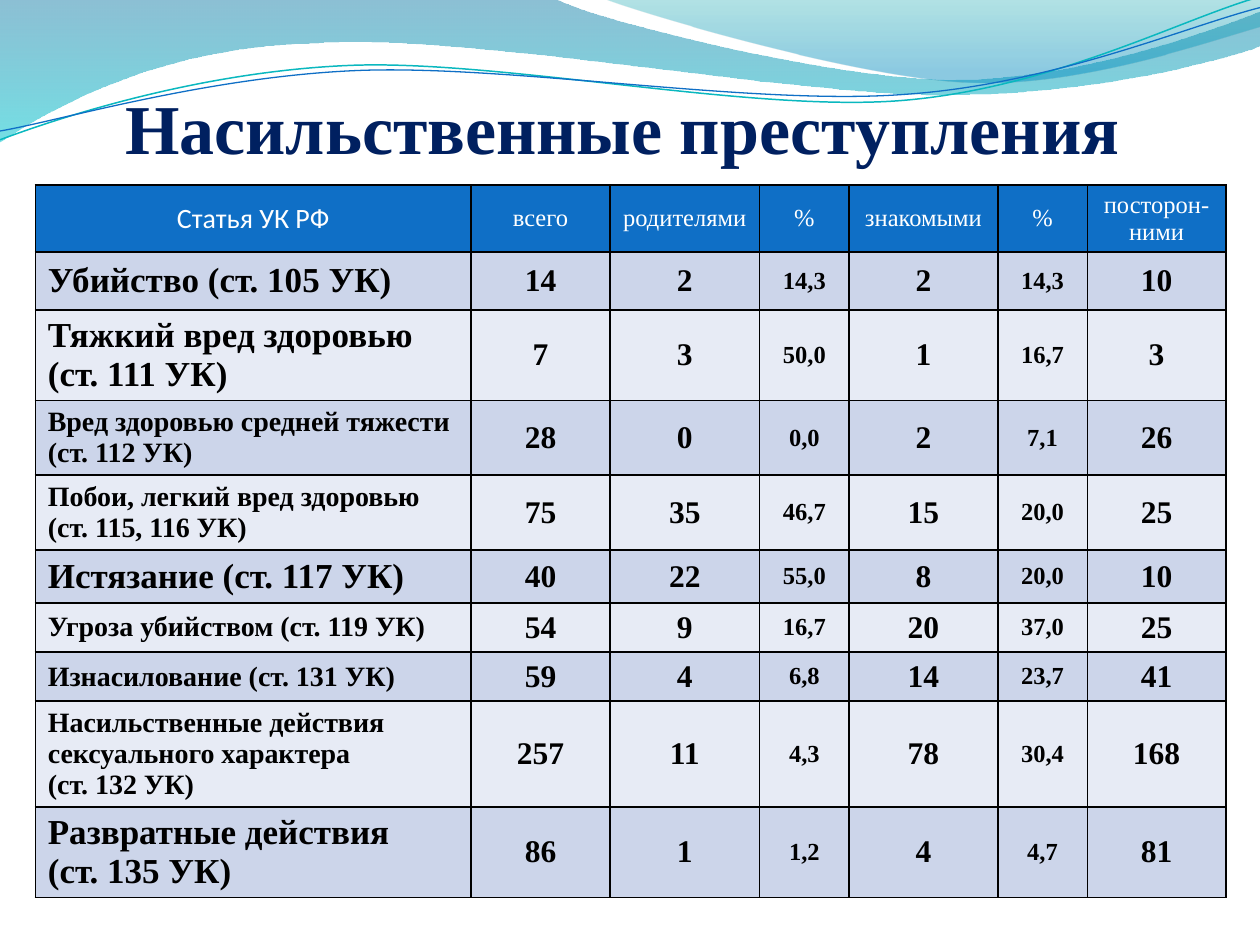
"""Build a slide with a table of violent crimes under a wave header."""
import math

from lxml import etree
from pptx import Presentation
from pptx import util as u
from pptx.dml.color import RGBColor
from pptx.enum import text
from pptx.oxml.ns import qn

SERIF, SANS = "Times New Roman", "Calibri"
NAVY, BLUE, TEAL = "002060", "0F6FC6", "0AB8BF"
BLACK, WHITE = "000000", "FFFFFF"
BANDS = ("CCD5EA", "E7EBF5")

TITLE = "Насильственные преступления"
HEADER = ("Статья УК РФ", "всего", "родителями", "%", "знакомыми", "%", "посторон-ними")
CRIMES = [
    # article size, row height, cells
    (20, 0.46, ("Убийство (ст. 105 УК)", "14", "2", "14,3", "2", "14,3", "10")),
    (20, 0.63, ("Тяжкий вред здоровью\n(ст. 111 УК)", "7", "3", "50,0", "1", "16,7", "3")),
    (16, 0.5, ("Вред здоровью средней тяжести (ст. 112 УК)", "28", "0", "0,0", "2", "7,1", "26")),
    (16, 0.5, ("Побои, легкий вред здоровью (ст. 115, 116 УК)", "75", "35", "46,7", "15", "20,0", "25")),
    (20, 0.42, ("Истязание (ст. 117 УК)", "40", "22", "55,0", "8", "20,0", "10")),
    (16, 0.39, ("Угроза убийством (ст. 119 УК)", "54", "9", "16,7", "20", "37,0", "25")),
    (16, 0.39, ("Изнасилование (ст. 131 УК)", "59", "4", "6,8", "14", "23,7", "41")),
    (16, 0.5, ("Насильственные действия сексуального характера\n(ст. 132 УК)",
               "257", "11", "4,3", "78", "30,4", "168")),
    (20, 0.5, ("Развратные действия\n(ст. 135 УК)", "86", "1", "1,2", "4", "4,7", "81")),
]
HEADER_HEIGHT = 0.5
COLUMNS = (3.46, 1.1, 1.19, 0.71, 1.18, 0.71, 1.1)
NUMBER_SIZES = (18, 18, 14, 18, 14, 18)

# Each step is an end point (line) or two control points and an end point (curve).
WAVES = [
    ((-0.01, -0.01, 10.02, 1.14),
     [(0, 0), (4.4, -0.01), (4.76, 0.17, 6.64, 0.63, 7.58, 0.63),
      (8.53, 0.63, 9.58, 0.26, 10, 0.09), (10.01, 0.36),
      (9.83, 0.44, 8.7, 0.76, 7.46, 0.75), (6.22, 0.75, 3.82, 0.28, 2.57, 0.34),
      (1.29, 0.36, 0.46, 0.83, -0.01, 1.13), (0, 0)],
     ((0, "0074A1", 45), (1, "00C6CF", 55))),
    ((4.79, -0.01, 5.21, 0.7),
     [(4.79, -0.01), (5.09, 0.11, 6.82, 0.62, 7.69, 0.65),
      (8.56, 0.69, 9.61, 0.32, 10, 0.21), (10, 0), (4.79, -0.01)],
     ((0, "00A1A9", 30), (0.8, "008BBF", 45))),
]
STRANDS = [
    ((-0.02, 0.22, 10.02, 0.71),
     [(0, 1.11), (0.48, 0.93, 1.58, 0.57, 2.77, 0.52),
      (3.95, 0.47, 5.93, 0.89, 7.13, 0.8), (8.33, 0.71, 9.38, 0.15, 9.98, -0.02)], TEAL, 0.85),
    ((-0.02, 0.3, 10.03, 0.58),
     [(0, 1.04), (0.47, 0.96, 1.64, 0.61, 2.83, 0.56),
      (4.03, 0.51, 5.97, 0.84, 7.17, 0.75), (8.36, 0.67, 9.41, 0.21, 10, 0.06)], BLUE, 0.75),
]
STRAND_TURN = 357.3


def color(value):
    return RGBColor.from_string(value)


def place(shape, area):
    shape.left, shape.top, shape.width, shape.height = map(u.Inches, area)


def local_point(x, y, area, turn):
    left, top, width, height = area
    angle = math.radians(-turn)
    dx, dy = x - left - width / 2, y - top - height / 2
    return (u.Inches(dx * math.cos(angle) - dy * math.sin(angle) + width / 2),
            u.Inches(dx * math.sin(angle) + dy * math.cos(angle) + height / 2))


def add_outline(shapes, area, steps, close, turn=0):
    builder = shapes.build_freeform(*steps[0], scale=u.Inches(1))
    builder.add_line_segments([step[-2:] for step in steps[1:]], close=close)
    shape = builder.convert_to_shape()
    shape.shadow.inherit = False
    place(shape, area)
    shape.rotation = turn
    outline = next(shape._element.spPr.iter(qn("a:path")))
    outline.set("w", str(shape.width))
    outline.set("h", str(shape.height))
    for old in list(outline):
        outline.remove(old)
    for index, step in enumerate(steps):
        tag = "a:moveTo" if index == 0 else "a:lnTo" if len(step) == 2 else "a:cubicBezTo"
        segment = etree.SubElement(outline, qn(tag))
        for x, y in zip(step[::2], step[1::2]):
            px, py = local_point(x, y, area, turn)
            etree.SubElement(segment, qn("a:pt"), x=str(px), y=str(py))
    if close:
        etree.SubElement(outline, qn("a:close"))
    return shape


def add_wave(shapes, area, steps, stops):
    shape = add_outline(shapes, area, steps, True)
    shape.line.fill.background()
    shape.fill.gradient()
    shape.fill.gradient_angle = 270
    for stop, (position, value, _) in zip(shape.fill.gradient_stops, stops):
        stop.position = position
        stop.color.rgb = color(value)
    tones = list(shape._element.spPr.iter(qn("a:srgbClr")))
    for tone, (_, _, opacity) in zip(tones, stops):
        etree.SubElement(tone, qn("a:alpha"), val=str(opacity * 1000))


def add_strand(shapes, area, steps, value, width):
    shape = add_outline(shapes, area, steps, False, STRAND_TURN)
    shape.fill.background()
    shape.line.color.rgb = color(value)
    shape.line.width = u.Pt(width)


def set_font(para, size, value, bold, name=SERIF):
    font = para.font
    font.size, font.bold, font.name = u.Pt(size), bold, name
    font.color.rgb = color(value)


def set_title(page):
    box = page.shapes.title
    page.shapes._spTree.append(box._element)
    place(box, (0.44, 0.29, 9, 1.05))
    frame = box.text_frame
    frame.text = TITLE
    frame.auto_size = text.MSO_AUTO_SIZE.NONE
    frame.vertical_anchor = text.MSO_ANCHOR.BOTTOM
    frame.margin_left = frame.margin_right = frame.margin_bottom = 0
    frame.margin_top = u.Inches(0.05)
    frame.paragraphs[0].alignment = text.PP_ALIGN.CENTER
    set_font(frame.paragraphs[0], 40, NAVY, True)


def fill_cell(cell, words, fill, centred, **font):
    cell.text = words
    cell.vertical_anchor = text.MSO_ANCHOR.MIDDLE
    cell.fill.solid()
    cell.fill.fore_color.rgb = color(fill)
    for para in cell.text_frame.paragraphs:
        para.alignment = text.PP_ALIGN.CENTER if centred else text.PP_ALIGN.LEFT
        set_font(para, **font)
    properties = cell._tc.get_or_add_tcPr()
    for index, side in enumerate(("lnL", "lnR", "lnT", "lnB")):
        border = etree.Element(qn(f"a:{side}"), w=str(u.Pt(1)))
        paint = etree.SubElement(border, qn("a:solidFill"))
        etree.SubElement(paint, qn("a:srgbClr"), val=BLACK)
        properties.insert(index, border)


def add_crime_table(page):
    area = map(u.Inches, (0.28, 1.47, sum(COLUMNS), 5.96))
    table = page.shapes.add_table(len(CRIMES) + 1, len(COLUMNS), *area).table
    for column, width in zip(table.columns, COLUMNS):
        column.width = u.Inches(width)
    table.rows[0].height = u.Inches(HEADER_HEIGHT)
    for index, words in enumerate(HEADER):
        size, name = (14, SERIF) if index else (16, SANS)
        fill_cell(table.cell(0, index), words, BLUE, True,
                  size=size, value=WHITE, bold=False, name=name)
    for row, (article_size, height, cells) in enumerate(CRIMES, 1):
        table.rows[row].height = u.Inches(height)
        sizes = (article_size, *NUMBER_SIZES)
        for index, (words, size) in enumerate(zip(cells, sizes)):
            fill_cell(table.cell(row, index), words, BANDS[(row - 1) % 2], index > 0,
                      size=size, value=BLACK, bold=True)


def main():
    deck = Presentation()
    deck.slide_width, deck.slide_height = u.Inches(10), u.Inches(7.5)
    page = deck.slides.add_slide(deck.slide_layouts[5])
    for wave in WAVES:
        add_wave(page.shapes, *wave)
    strands = page.shapes.add_group_shape()
    for strand in STRANDS:
        add_strand(strands.shapes, *strand)
    set_title(page)
    add_crime_table(page)
    deck.save("out.pptx")


if __name__ == "__main__":
    main()
